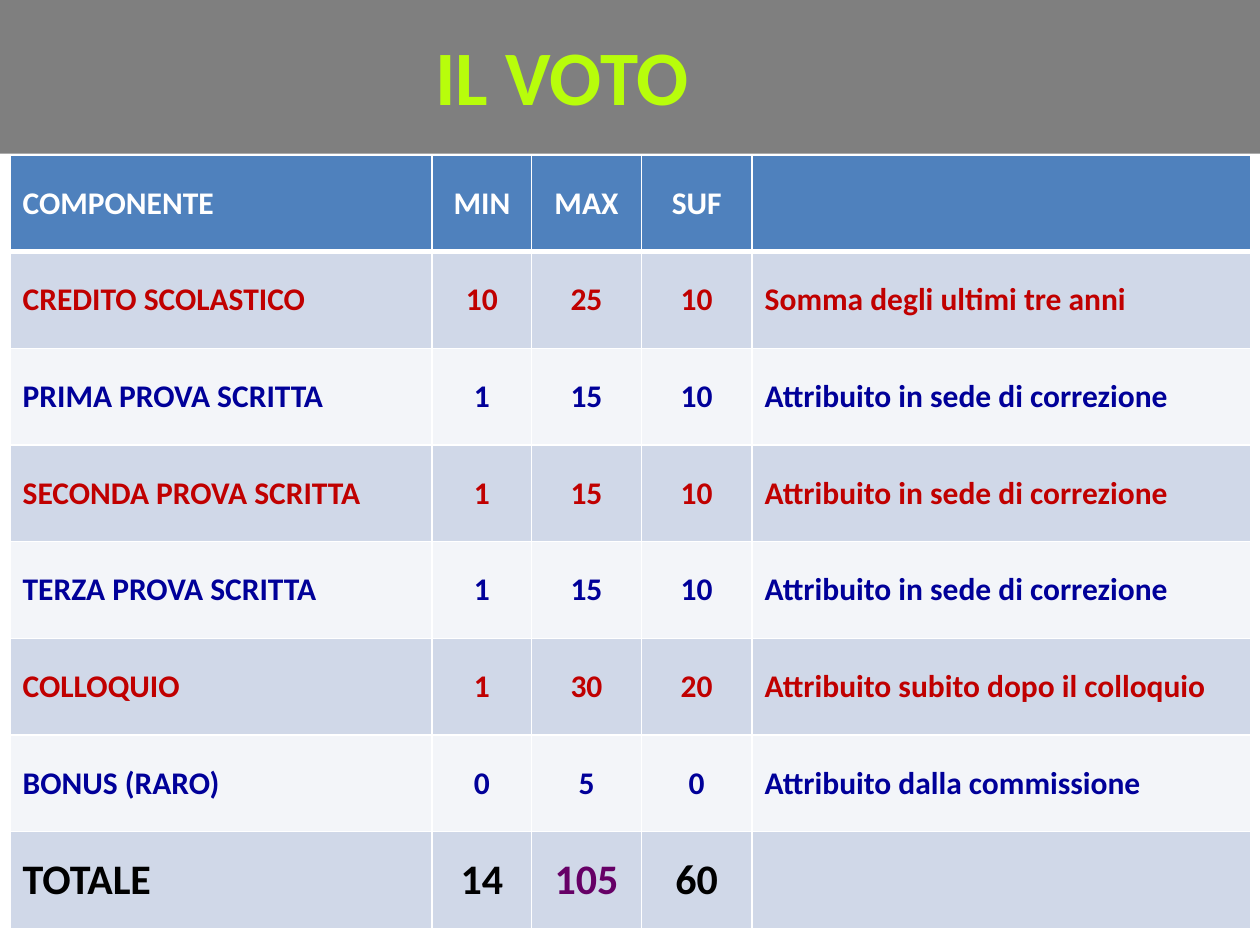
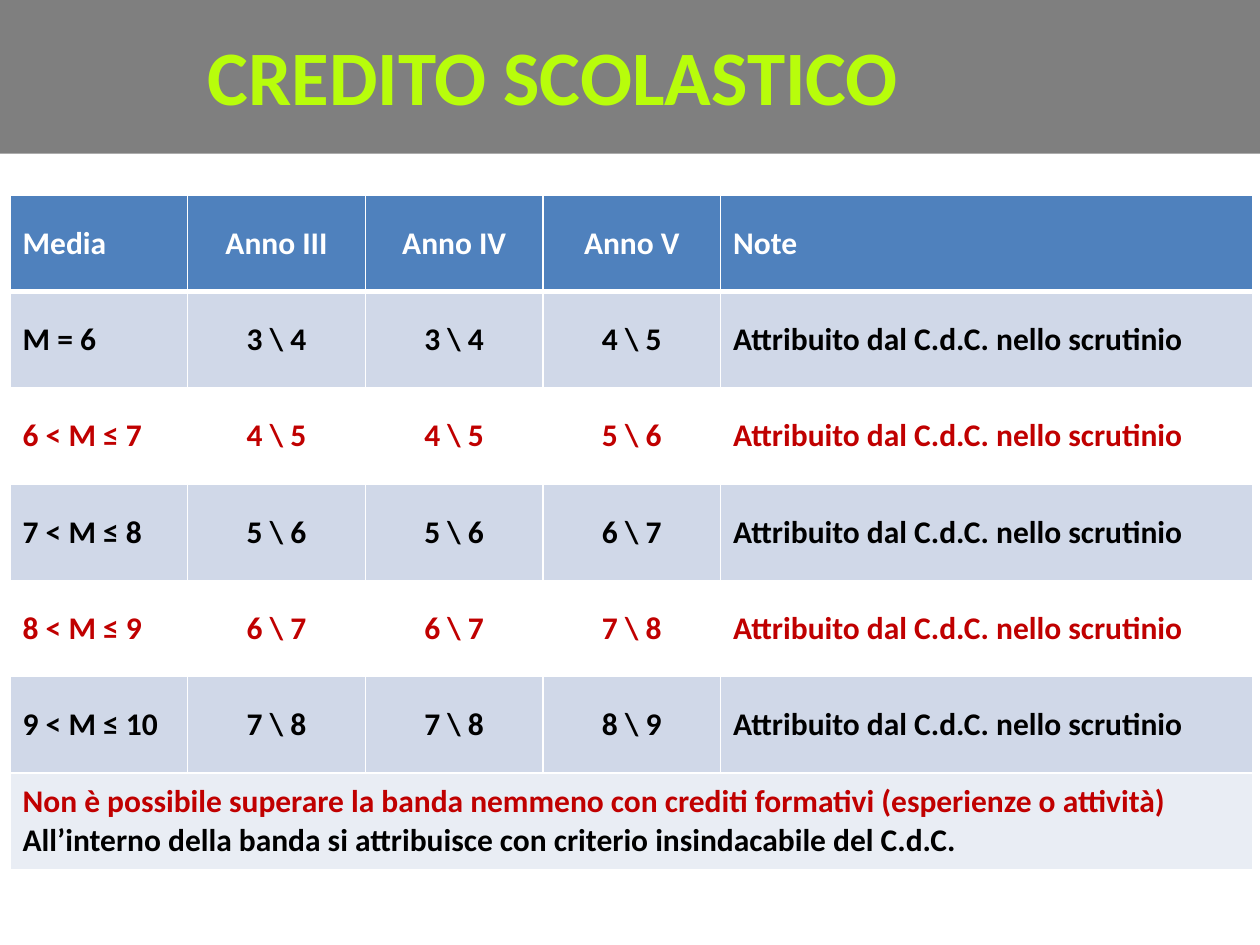
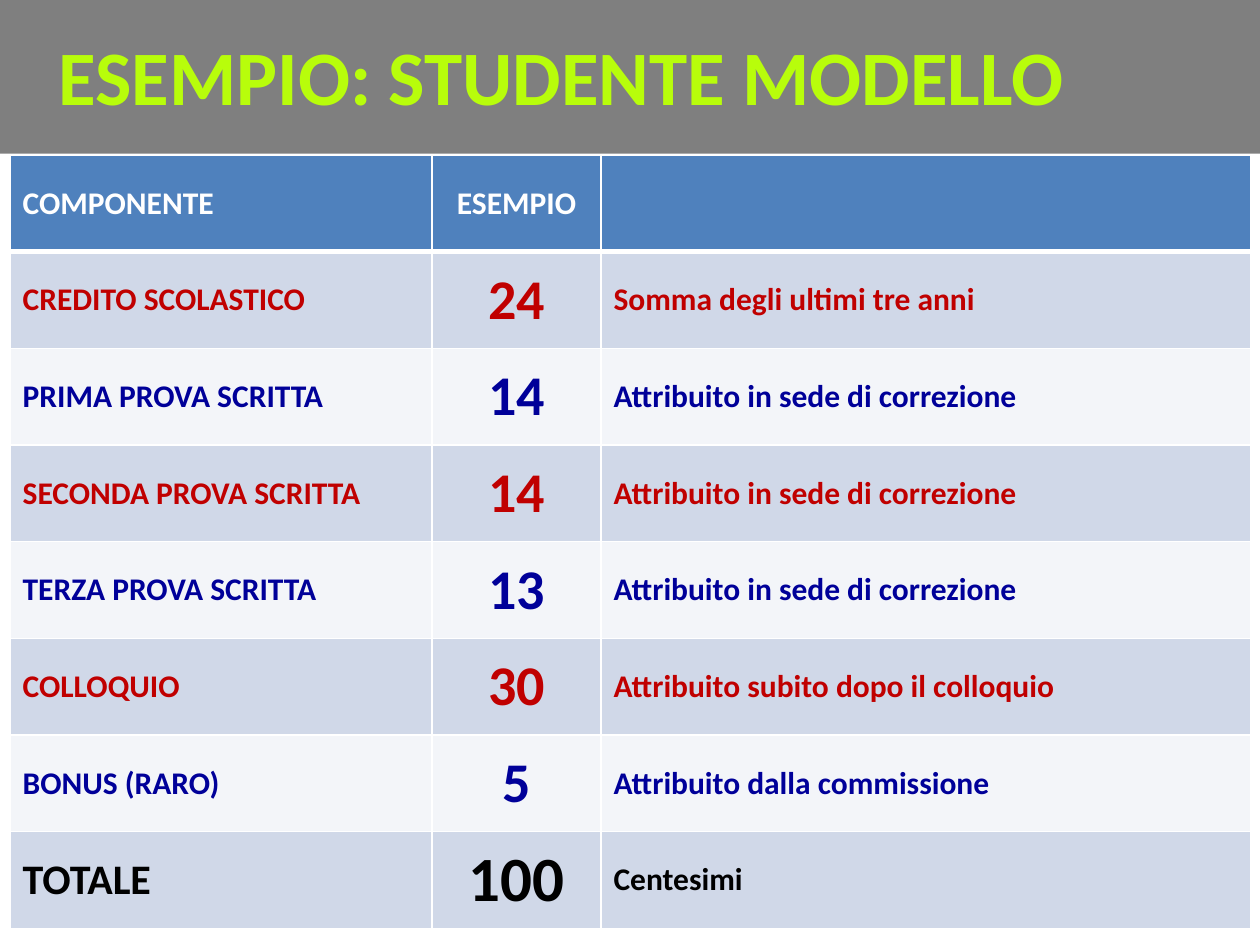
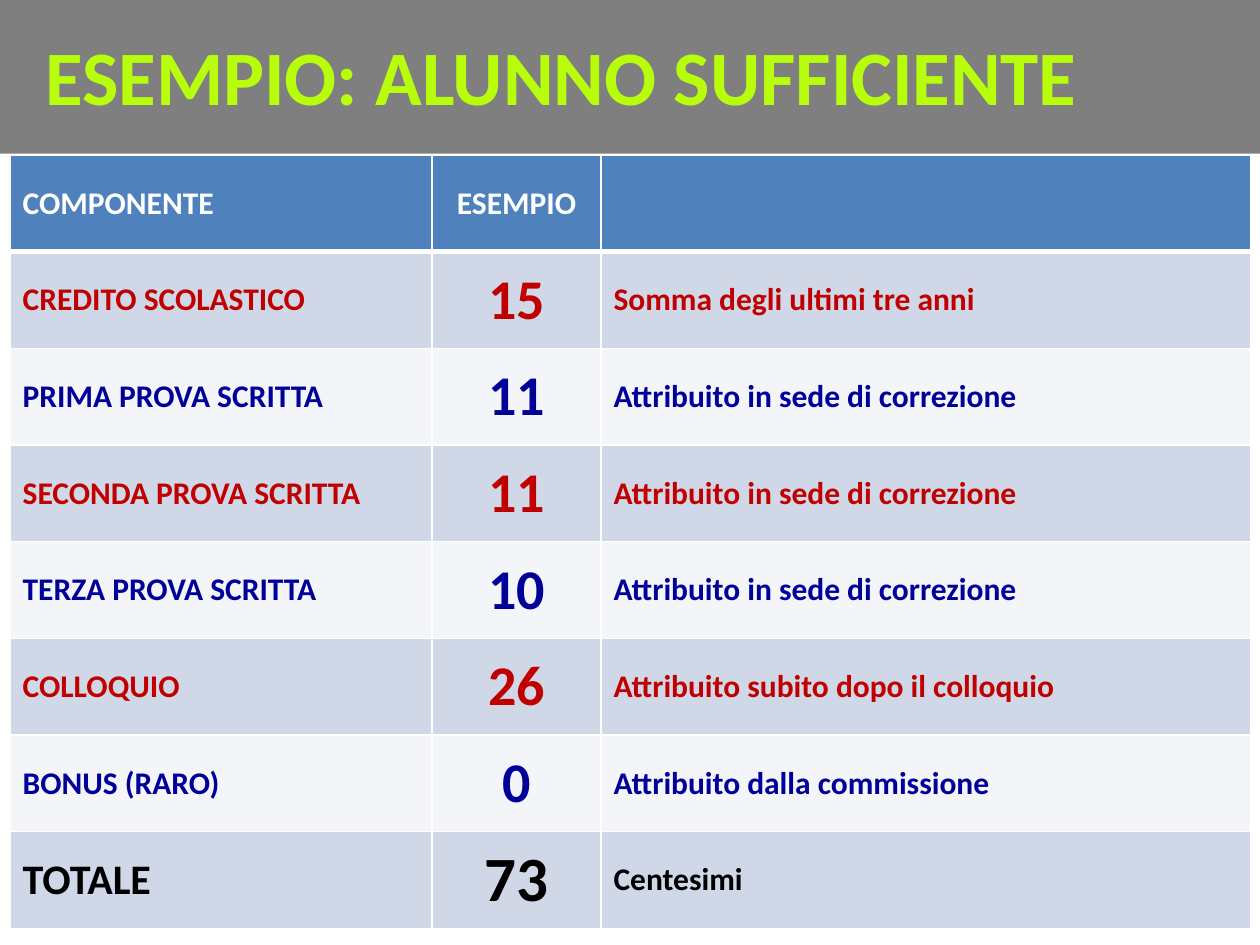
from lxml.etree import SubElement
from pptx import Presentation
from pptx.dml.color import RGBColor
from pptx.enum.text import MSO_ANCHOR, MSO_AUTO_SIZE, PP_ALIGN
from pptx.oxml.ns import qn
from pptx.util import Inches, Pt

FONT = "Calibri"
BLACK = RGBColor(0x00, 0x00, 0x00)
WHITE = RGBColor(0xFF, 0xFF, 0xFF)
LIME = RGBColor(0xB8, 0xFD, 0x0B)
OUTLINE_PURPLE = RGBColor(0x5E, 0x45, 0x7C)
RED = RGBColor(0xC0, 0x00, 0x00)
NAVY = RGBColor(0x00, 0x00, 0x99)
MAXIMUM_PURPLE = RGBColor(0x66, 0x00, 0x66)
HEADER_BLUE = RGBColor(0x4F, 0x81, 0xBD)
BAND_BLUE = RGBColor(0xD0, 0xD8, 0xE8)
PALE_BLUE = RGBColor(0xE9, 0xED, 0xF4)

TITLE_BOX = (0, -0.03, 10, 1.25)
GRADE_BOX = (0.08, 1.23, 9.84, 6.14)
CREDIT_BOX = (0.08, 1.55, 9.84, 5.35)
GRADE_COLUMNS = (3.35, 0.79, 0.87, 0.88, 3.96)
EXAMPLE_COLUMNS = (3.35, 1.34, 5.16)
CREDIT_COLUMNS = (1.41, 1.41, 1.41, 1.41, 4.22)

CORRECTION_NOTE = "Attribuito in sede di correzione"
COMPONENTS = (
    ("CREDITO SCOLASTICO", "Somma degli ultimi tre anni"),
    ("PRIMA PROVA SCRITTA", CORRECTION_NOTE),
    ("SECONDA PROVA SCRITTA", CORRECTION_NOTE),
    ("TERZA PROVA SCRITTA", CORRECTION_NOTE),
    ("COLLOQUIO", "Attribuito subito dopo il colloquio"),
    ("BONUS (RARO)", "Attribuito dalla commissione"),
)
GRADE_LIMITS = ((10, 25, 10), (1, 15, 10), (1, 15, 10), (1, 15, 10), (1, 30, 20), (0, 5, 0))
# Average band, then the lower credit of the third, fourth and fifth year
CREDIT_BANDS = (
    ("M = 6", 3, 3, 4),
    ("6 < M ≤ 7", 4, 4, 5),
    ("7 < M ≤ 8", 5, 5, 6),
    ("8 < M ≤ 9", 6, 6, 7),
    ("9 < M ≤ 10", 7, 7, 8),
)


def set_font(font, size, color):
    font.name = FONT
    font.size = Pt(size)
    font.bold = True
    font.color.rgb = color


def add_solid_line(parent, tag, width, color):
    line = SubElement(parent, qn(tag), w=str(Pt(width)))
    fill = SubElement(line, qn("a:solidFill"))
    SubElement(fill, qn("a:srgbClr"), val=str(color))


def make_half_transparent(properties):
    color = properties.find(qn("a:solidFill")).find(qn("a:srgbClr"))
    SubElement(color, qn("a:alpha"), val="50000")


def add_titled_slide(presentation, title):
    slide = presentation.slides.add_slide(presentation.slide_layouts[5])
    shape = slide.shapes.title
    shape.left, shape.top, shape.width, shape.height = map(Inches, TITLE_BOX)
    shape.fill.solid()
    shape.fill.fore_color.rgb = BLACK
    make_half_transparent(shape._element.spPr)

    frame = shape.text_frame
    frame.text = title
    frame.word_wrap = True
    frame.auto_size = MSO_AUTO_SIZE.NONE
    frame.vertical_anchor = MSO_ANCHOR.MIDDLE
    frame.margin_left, frame.margin_right = Inches(0.1), Inches(1.18)
    frame.margin_top = frame.margin_bottom = Inches(0.05)
    paragraph = frame.paragraphs[0]
    paragraph.alignment = PP_ALIGN.CENTER
    add_solid_line(paragraph.font._element, "a:ln", 0.71, OUTLINE_PURPLE)
    set_font(paragraph.font, 44, LIME)
    return slide


def set_borders(cell, top, bottom):
    properties = cell._tc.get_or_add_tcPr()
    for side, width in (("L", 1), ("R", 1), ("T", top), ("B", bottom)):
        add_solid_line(properties, f"a:ln{side}", width, WHITE)


def add_table(slide, box, column_widths, row_count):
    """Add an empty table with equal rows, white rules and banded fills."""
    left, top, width, height = map(Inches, box)
    table = slide.shapes.add_table(
        row_count, len(column_widths), left, top, width, height).table
    for column, column_width in zip(table.columns, column_widths):
        column.width = Inches(column_width)
    for index, row in enumerate(table.rows):
        row.height = height // row_count
        for cell in row.cells:
            set_borders(cell, 3 if index == 1 else 1, 3 if index == 0 else 1)
            cell.vertical_anchor = MSO_ANCHOR.MIDDLE
            fill_cell(cell, BAND_BLUE if index else HEADER_BLUE)
    return table


def fill_cell(cell, color, half_transparent=False):
    cell.fill.solid()
    cell.fill.fore_color.rgb = color
    if half_transparent:
        make_half_transparent(cell._tc.tcPr)


def write_row(table, index, texts, color, sizes=(18, 18, 18)):
    """Write a row; sizes are those of the label, the values and the note."""
    last = len(texts) - 1
    label_size, value_size, note_size = sizes
    for column, text in enumerate(texts):
        if text == "":
            continue
        cell = table.cell(index, column)
        cell.text = str(text)
        paragraph = cell.text_frame.paragraphs[0]
        if column == 0:
            size = label_size
        elif column == last:
            size = note_size
        else:
            size = value_size
            paragraph.alignment = PP_ALIGN.CENTER
        set_font(paragraph.font, size, color)


def add_component_table(slide, columns, headings, values, total, value_size, total_size):
    """Add the exam components with their values and a closing total row."""
    table = add_table(slide, GRADE_BOX, columns, len(COMPONENTS) + 2)
    write_row(table, 0, ("COMPONENTE", *headings, ""), WHITE)
    for index, ((label, note), scores) in enumerate(zip(COMPONENTS, values), start=1):
        is_even = index % 2 == 0
        if is_even:
            for cell in table.rows[index].cells:
                fill_cell(cell, PALE_BLUE, half_transparent=True)
        write_row(table, index, (label, *scores, note),
                  NAVY if is_even else RED, (18, value_size, 18))
    write_row(table, len(COMPONENTS) + 1, ("TOTALE", *total), BLACK, (24, total_size, 18))
    return table


def add_grade_slide(presentation):
    slide = add_titled_slide(presentation, "IL VOTO")
    table = add_component_table(slide, GRADE_COLUMNS, ("MIN", "MAX", "SUF"),
                                GRADE_LIMITS, (14, 105, 60, ""), 18, 24)
    maximum = table.cell(len(COMPONENTS) + 1, 2)
    maximum.text_frame.paragraphs[0].font.color.rgb = MAXIMUM_PURPLE


def add_credit_slide(presentation):
    slide = add_titled_slide(presentation, "CREDITO SCOLASTICO ")
    closing_row = len(CREDIT_BANDS) + 1
    table = add_table(slide, CREDIT_BOX, CREDIT_COLUMNS, closing_row + 1)
    write_row(table, 0, ("Media", "Anno III", "Anno IV", "Anno V", "Note"), WHITE)
    for index, (average, *credits) in enumerate(CREDIT_BANDS, start=1):
        is_even = index % 2 == 0
        if is_even:
            for cell in table.rows[index].cells:
                fill_cell(cell, WHITE, half_transparent=True)
        ranges = [f"{credit} \\ {credit + 1}" for credit in credits]
        write_row(table, index, (average, *ranges, "Attribuito dal C.d.C. nello scrutinio"),
                  RED if is_even else BLACK)

    remark = table.cell(closing_row, 0)
    remark.merge(table.cell(closing_row, len(CREDIT_COLUMNS) - 1))
    fill_cell(remark, PALE_BLUE)
    remark.text = (
        "Non è possibile superare la banda nemmeno con crediti formativi (esperienze o attività)\n"
        "All’interno della banda si attribuisce con criterio insindacabile del C.d.C."
    )
    for paragraph, color in zip(remark.text_frame.paragraphs, (RED, BLACK)):
        set_font(paragraph.font, 18, color)


def add_example_slide(presentation, title, scores):
    slide = add_titled_slide(presentation, title)
    add_component_table(slide, EXAMPLE_COLUMNS, ("ESEMPIO",), [(score,) for score in scores],
                        (sum(scores), "Centesimi"), 32, 36)


def main():
    presentation = Presentation()
    presentation.slide_width, presentation.slide_height = Inches(10), Inches(7.5)
    add_grade_slide(presentation)
    add_credit_slide(presentation)
    add_example_slide(presentation, "ESEMPIO: STUDENTE MODELLO", (24, 14, 14, 13, 30, 5))
    add_example_slide(presentation, "ESEMPIO: ALUNNO SUFFICIENTE", (15, 11, 11, 10, 26, 0))
    presentation.save("out.pptx")


if __name__ == "__main__":
    main()
